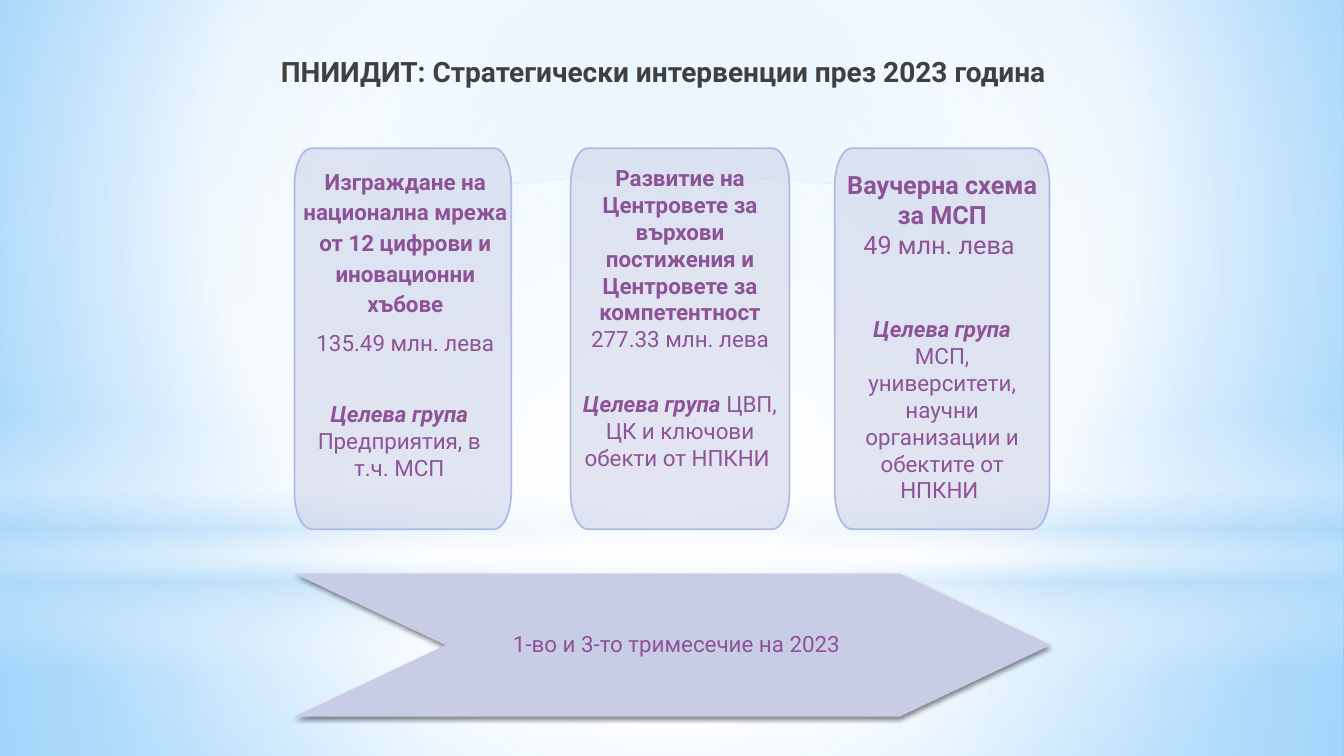
from lxml.etree import SubElement
from pptx import Presentation
from pptx.dml.color import RGBColor
from pptx.enum.shapes import MSO_SHAPE
from pptx.enum.text import MSO_ANCHOR, MSO_AUTO_SIZE, PP_ALIGN
from pptx.oxml.ns import qn
from pptx.util import Inches, Pt

FONT = "Roboto"
TITLE_GREY = RGBColor(0x40, 0x40, 0x40)
PURPLE = RGBColor(0x8D, 0x53, 0x97)
LAVENDER = RGBColor(0xC8, 0xCD, 0xE5)
CARD_LINE = RGBColor(0xAF, 0xBB, 0xE6)
WHITE = RGBColor(0xFF, 0xFF, 0xFF)
PALE_BLUE = RGBColor(0xB4, 0xDC, 0xFA)
SKY_BLUE = RGBColor(0x9E, 0xD5, 0xFF)
DEEP_BLUE = RGBColor(0x5B, 0xB9, 0xFF)

CARD_TOP, CARD_HEIGHT = 1.47, 3.78
CENTRE = (50, 50, 50, 50)

# Boxes are left, top, width, height in inches
CARDS = [
    {"left": 2.92, "width": 2.15,
     "heading": "Изграждане на национална мрежа от 12 цифрови и иновационни хъбове",
     "amount": "135.49 млн. лева", "size": 16, "spacing": 1.14, "after": 5.6,
     "heading_box": (2.83, 1.58, 2.38, 2.04),
     "target": "Предприятия, в т.ч. МСП", "target_box": (2.92, 3.92, 2.08, 0.91)},
    {"left": 5.66, "width": 2.17,
     "heading": "Развитие на Центровете за върхови постижения и Центровете за компетентност",
     "amount": "277.33 млн. лева", "size": 16, "spacing": 1, "after": 0,
     "heading_box": (5.66, 1.58, 2.17, 1.99),
     "target": "ЦВП, ЦК и ключови обекти от НПКНИ ", "target_box": (5.66, 3.82, 2.17, 1.18)},
    {"left": 8.28, "width": 2.13,
     "heading": "Ваучерна схема за МСП",
     "amount": "49 млн. лева ", "size": 18, "spacing": 1, "after": 0,
     "heading_box": (8.28, 1.63, 2.13, 1.01),
     "target": "МСП, университети, научни организации и обектите от НПКНИ ",
     "target_box": (8.28, 3.08, 2.13, 1.99)},
]


def inches(box):
    return [Inches(value) for value in box]


def add_alpha(color_element, percent):
    SubElement(color_element, qn("a:alpha"), val=str(percent * 1000))


def set_gradient(properties, stops, centre=None):
    """Swap a solid fill for a gradient: circular round centre, else vertical."""
    solid = properties.find(qn("a:solidFill"))
    gradient = SubElement(properties, qn("a:gradFill"), rotWithShape="1")
    properties.replace(solid, gradient)
    stop_list = SubElement(gradient, qn("a:gsLst"))
    for position, color, opacity in stops:
        stop = SubElement(stop_list, qn("a:gs"), pos=str(position * 1000))
        add_alpha(SubElement(stop, qn("a:srgbClr"), val=str(color)), opacity)
    if centre:
        path = SubElement(gradient, qn("a:path"), path="circle")
        sides = {side: str(value * 1000) for side, value in zip("ltrb", centre)}
        SubElement(path, qn("a:fillToRect"), **sides)
    else:
        SubElement(gradient, qn("a:lin"), ang="5400000", scaled="0")


def add_run(paragraph, text, size, color=PURPLE, bold=False, italic=False):
    run = paragraph.add_run()
    run.text = text
    font = run.font
    font.name, font.size, font.bold, font.italic = FONT, Pt(size), bold, italic
    font.color.rgb = color


def add_text_box(slide, box):
    frame = slide.shapes.add_textbox(*inches(box)).text_frame
    frame.word_wrap = True
    frame.auto_size = MSO_AUTO_SIZE.SHAPE_TO_FIT_TEXT
    return frame


def add_background(slide, master):
    slide.background.fill.solid()
    slide.background.fill.fore_color.rgb = WHITE
    background = next(slide.element.iter(qn("p:bgPr")))
    set_gradient(background, [(0, SKY_BLUE, 100), (60, WHITE, 100), (100, DEEP_BLUE, 100)],
                 (20, 10, 20, 60))

    # Translucent layers of light, kept on the slide master
    layers = [
        (MSO_SHAPE.RECTANGLE, (0, 5.58, 13.33, 1.92), CENTRE,
         [(0, WHITE, 91), (37, WHITE, 76), (100, PALE_BLUE, 79)]),
        (MSO_SHAPE.RECTANGLE, (0, 0, 13.33, 5.58), CENTRE,
         [(0, WHITE, 89), (48, WHITE, 62), (100, PALE_BLUE, 79)]),
        (MSO_SHAPE.RECTANGLE, (0, 4.12, 13.33, 2.5), None,
         [(0, WHITE, 0), (29, WHITE, 30), (45, PALE_BLUE, 40),
          (55, WHITE, 26), (65, PALE_BLUE, 60), (100, WHITE, 0)]),
        (MSO_SHAPE.OVAL, (0, 1.75, 13.33, 5.58), CENTRE,
         [(0, WHITE, 100), (56, WHITE, 0)]),
    ]
    master_tree = next(master.element.iter(qn("p:spTree")))
    for number, (kind, box, centre, stops) in enumerate(layers):
        shape = slide.shapes.add_shape(kind, *inches(box))
        shape.shadow.inherit = False
        shape.line.fill.background()
        shape.fill.solid()
        set_gradient(shape.element.spPr, stops, centre)
        shape.element.nvSpPr.cNvPr.set("id", str(101 + number))
        master_tree.insert(2 + number, shape.element)


def add_title(slide, box):
    title = slide.shapes.title
    title.left, title.top, title.width, title.height = inches(box)
    frame = title.text_frame
    frame.word_wrap = True
    frame.auto_size = MSO_AUTO_SIZE.NONE
    frame.vertical_anchor = MSO_ANCHOR.TOP
    paragraph = frame.paragraphs[0]
    paragraph.alignment = PP_ALIGN.CENTER
    add_run(paragraph, "ПНИИДИТ: Стратегически интервенции през 2023 година", 20,
            TITLE_GREY, bold=True)


def round_corners(shape):
    """Turn every other segment, beginning with the first, into an elliptical corner."""
    points = [(int(point.get("x")), int(point.get("y")))
              for point in shape.element.iter(qn("a:pt"))]
    segments = list(shape.element.iter(qn("a:lnTo")))
    for index in range(0, len(segments), 2):
        start, end = points[index], points[index + 1]
        corner = (start[0], end[1]) if index % 4 == 0 else (end[0], start[1])
        controls = [[round(a + 0.55 * (c - a)) for a, c in zip(point, corner)]
                    for point in (start, end)]
        segment = segments[index]
        curve = SubElement(segment.getparent(), qn("a:cubicBezTo"))
        segment.getparent().replace(segment, curve)
        for x, y in [*controls, end]:
            SubElement(curve, qn("a:pt"), x=str(x), y=str(y))


def add_card_outline(slide, left, top, width, height):
    radius_x, radius_y = 0.17, 0.37
    right, bottom = left + width, top + height
    points = [inches(point) for point in [
        (left, top + radius_y), (left + radius_x, top),
        (right - radius_x, top), (right, top + radius_y),
        (right, bottom - radius_y), (right - radius_x, bottom),
        (left + radius_x, bottom), (left, bottom - radius_y)]]
    builder = slide.shapes.build_freeform(*points[0])
    builder.add_line_segments(points[1:], close=True)
    card = builder.convert_to_shape()
    round_corners(card)
    card.shadow.inherit = False
    card.fill.solid()
    card.fill.fore_color.rgb = LAVENDER
    add_alpha(card.element.spPr.find(qn("a:solidFill"))[0], 50)
    card.line.color.rgb = CARD_LINE
    card.line.width = Pt(1.25)


def add_card(slide, card):
    add_card_outline(slide, card["left"], CARD_TOP, card["width"], CARD_HEIGHT)

    # Intervention and its budget
    frame = add_text_box(slide, card["heading_box"])
    for paragraph, text, bold in [(frame.paragraphs[0], card["heading"], True),
                                  (frame.add_paragraph(), card["amount"], False)]:
        paragraph.alignment = PP_ALIGN.CENTER
        paragraph.line_spacing = card["spacing"]
        paragraph.space_after = Pt(card["after"])
        add_run(paragraph, text, card["size"], bold=bold)

    # Target group
    paragraph = add_text_box(slide, card["target_box"]).paragraphs[0]
    paragraph.alignment = PP_ALIGN.CENTER
    add_run(paragraph, "Целева група ", 16, bold=True, italic=True)
    add_run(paragraph, card["target"], 16)


def add_timeline_arrow(slide, box):
    arrow = slide.shapes.add_shape(MSO_SHAPE.CHEVRON, *inches(box))
    arrow.adjustments[0] = 1.5 / box[3]  # point is 1.5 inches deep
    arrow.fill.solid()
    arrow.fill.fore_color.rgb = LAVENDER
    arrow.line.fill.background()
    arrow.shadow.inherit = False
    effects = arrow.element.spPr.find(qn("a:effectLst"))
    shadow = SubElement(effects, qn("a:outerShdw"), blurRad=str(Pt(3.1)),
                        dist=str(Pt(1.8)), dir="5400000", rotWithShape="0")
    add_alpha(SubElement(shadow, qn("a:srgbClr"), val="000000"), 45)

    frame = arrow.text_frame
    frame.word_wrap = True
    frame.vertical_anchor = MSO_ANCHOR.MIDDLE
    frame.margin_left, frame.margin_right = Inches(0.08), 0
    paragraph = frame.paragraphs[0]
    paragraph.alignment = PP_ALIGN.CENTER
    paragraph.line_spacing = 0.9
    add_run(paragraph, "1-во и 3-то тримесечие на 2023", 16)


def main():
    presentation = Presentation()
    presentation.slide_width, presentation.slide_height = Inches(13.33), Inches(7.5)
    slide = presentation.slides.add_slide(presentation.slide_layouts[5])
    add_background(slide, presentation.slide_master)
    add_title(slide, (1.67, 0.49, 9.82, 0.79))
    for card in CARDS:
        add_card(slide, card)
    add_timeline_arrow(slide, (2.92, 5.69, 7.5, 1.42))
    presentation.save("out.pptx")


if __name__ == "__main__":
    main()
